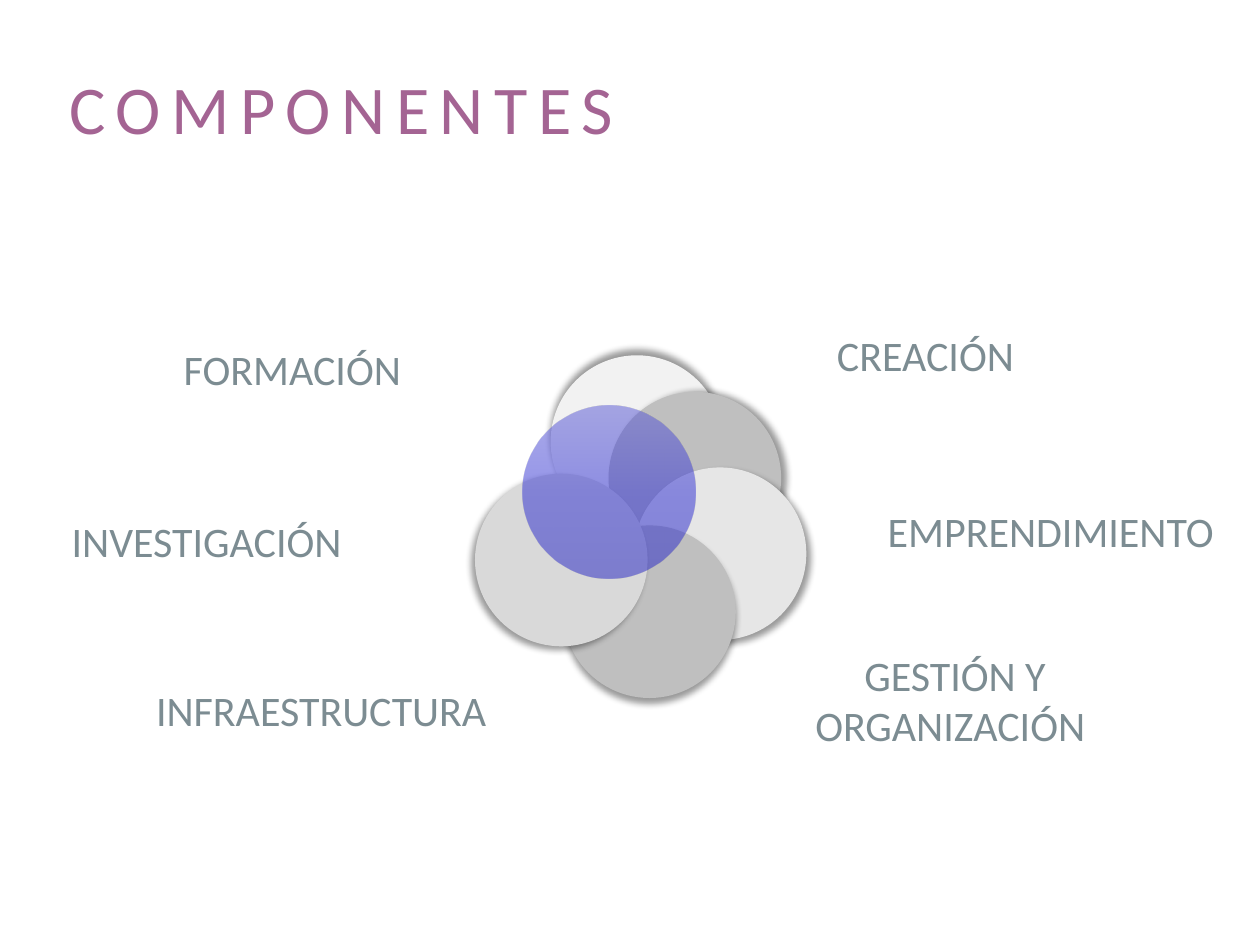
from dataclasses import dataclass
from typing import Optional

from lxml.etree import SubElement
from pptx import Presentation
from pptx.dml.color import RGBColor
from pptx.enum.shapes import MSO_SHAPE
from pptx.enum.text import MSO_ANCHOR, PP_ALIGN
from pptx.oxml.ns import qn
from pptx.util import Inches, Pt


@dataclass(frozen=True)
class Theme:
    font: str = "Calibri"
    title_size: float = 39
    label_size: float = 24
    title_color: str = "A46493"
    label_color: str = "7C8C92"
    shadow_color: str = "000000"
    highlight_stops: tuple = ((0, "5757D3"), (50, "2B2BD4"), (100, "2020C3"))
    highlight_opacity: int = 50
    diameter: float = 1.37


@dataclass(frozen=True)
class Circle:
    left: float
    top: float
    color: Optional[str] = None
    shadow_angle: int = 0


@dataclass(frozen=True)
class Label:
    text: str
    left: float
    top: float
    width: float
    height: float
    line_spacing: float = 0.9


THEME = Theme()

CIRCLES = [
    Circle(4.37, 2.82, "F2F2F2", 270),
    Circle(4.83, 3.11, "BFBFBF", 0),
    Circle(5.03, 3.71, "E6E6E6", 45),
    Circle(4.47, 4.17, "BFBFBF", 90),
    Circle(3.77, 3.76, "D9D9D9", 135),
    Circle(4.15, 3.22),
]

LABELS = [
    Label("FORMACIÓN", 0.67, 2.49, 3.3, 0.93),
    Label("CREACIÓN", 6.18, 2.33, 2.33, 1.02),
    Label("INVESTIGACIÓN", 0.43, 3.67, 2.42, 1.3),
    Label("GESTIÓN Y ORGANIZACIÓN ", 6.1, 5.09, 2.96, 0.93, 1.0),
    Label("INFRAESTRUCTURA", 0.98, 5.09, 3.14, 1.14),
    Label("EMPRENDIMIENTO", 6.81, 3.67, 3.06, 1.14),
]


def add_color(parent, color: str, opacity: int) -> None:
    element = SubElement(parent, qn("a:srgbClr"), val=color)
    SubElement(element, qn("a:alpha"), val=str(opacity * 1000))


def add_shadow(shape, angle: int) -> None:
    effects = shape._element.spPr.find(qn("a:effectLst"))
    shadow = SubElement(
        effects, qn("a:outerShdw"), blurRad=str(Pt(4)), dist=str(Pt(3)),
        dir=str(angle * 60000), rotWithShape="0",
    )
    add_color(shadow, THEME.shadow_color, 40)


def fill_highlight(shape) -> None:
    shape.fill.gradient()
    gradient = shape._element.spPr.find(qn("a:gradFill"))
    stops = gradient.find(qn("a:gsLst"))
    for stop in list(stops):
        stops.remove(stop)
    for position, color in THEME.highlight_stops:
        stop = SubElement(stops, qn("a:gs"), pos=str(position * 1000))
        add_color(stop, color, THEME.highlight_opacity)
    gradient.find(qn("a:lin")).set("ang", str(90 * 60000))


def add_circle(slide, circle: Circle) -> None:
    diameter = Inches(THEME.diameter)
    shape = slide.shapes.add_shape(
        MSO_SHAPE.OVAL, Inches(circle.left), Inches(circle.top), diameter, diameter
    )
    shape.line.fill.background()
    shape.shadow.inherit = False
    if circle.color is None:
        fill_highlight(shape)
    else:
        shape.fill.solid()
        shape.fill.fore_color.rgb = RGBColor.from_string(circle.color)
        add_shadow(shape, circle.shadow_angle)


def add_text(slide, label: Label, size: float, color: str, anchor, line_spacing):
    box = slide.shapes.add_textbox(
        Inches(label.left), Inches(label.top), Inches(label.width), Inches(label.height)
    )
    frame = box.text_frame
    frame.word_wrap = True
    frame.vertical_anchor = anchor
    frame.margin_left = frame.margin_right = Inches(0)
    frame.margin_top = frame.margin_bottom = Inches(0)
    paragraph = frame.paragraphs[0]
    paragraph.alignment = PP_ALIGN.CENTER
    paragraph.line_spacing = line_spacing
    run = paragraph.add_run()
    run.text = label.text
    run.font.name = THEME.font
    run.font.size = Pt(size)
    run.font.color.rgb = RGBColor.from_string(color)
    return run


def add_title(slide) -> None:
    title = Label("COMPONENTES", 0.43, 0.76, 4.56, 0.46)
    run = add_text(
        slide, title, THEME.title_size, THEME.title_color, MSO_ANCHOR.TOP, Pt(29.9)
    )
    run.font._element.set("spc", "600")


def main() -> None:
    presentation = Presentation()
    presentation.slide_width = Inches(10)
    presentation.slide_height = Inches(7.5)
    slide = presentation.slides.add_slide(presentation.slide_layouts[6])
    for circle, label in zip(CIRCLES, LABELS):
        add_circle(slide, circle)
        add_text(
            slide, label, THEME.label_size, THEME.label_color,
            MSO_ANCHOR.MIDDLE, label.line_spacing,
        )
    add_title(slide)
    presentation.save("out.pptx")


if __name__ == "__main__":
    main()
